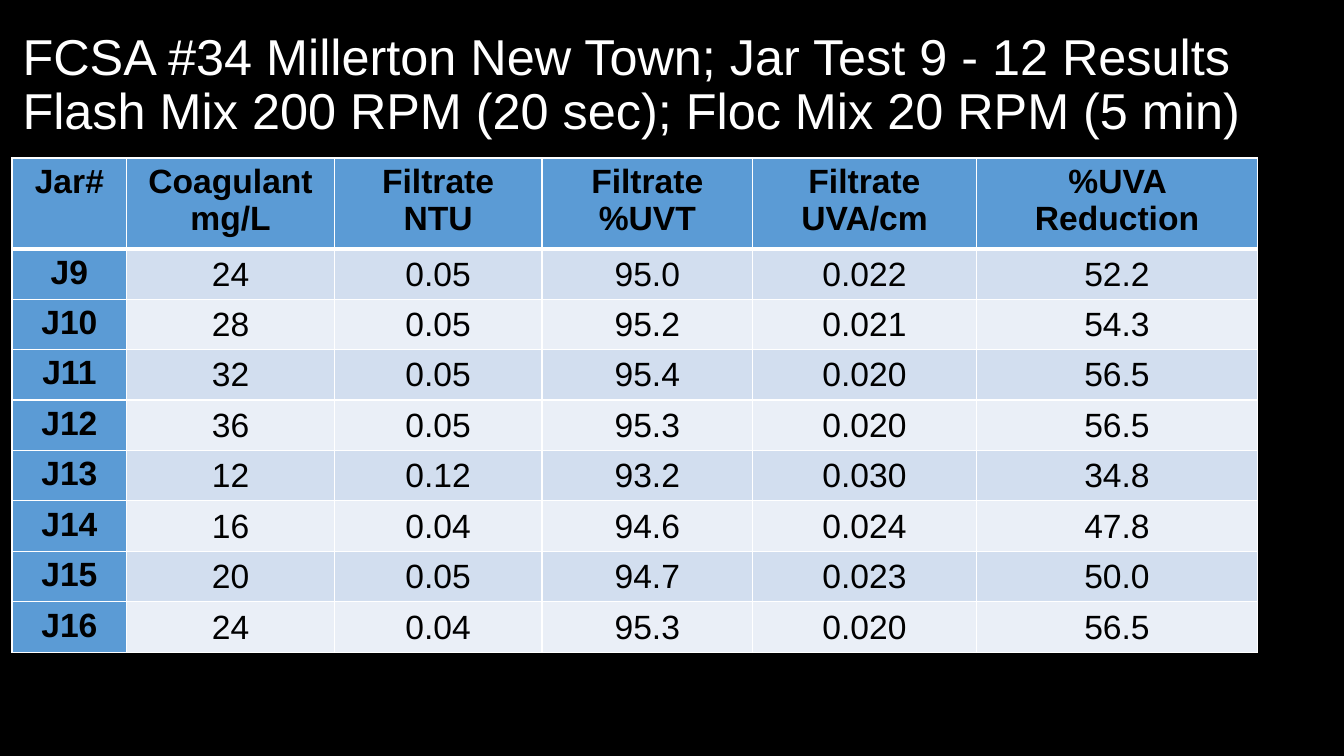
from lxml import etree
from pptx import Presentation
from pptx.dml.color import RGBColor
from pptx.enum.text import MSO_ANCHOR, PP_ALIGN
from pptx.oxml.ns import qn
from pptx.util import Pt

MIDDLE, TOP = MSO_ANCHOR.MIDDLE, MSO_ANCHOR.TOP
CENTER, LEFT = PP_ALIGN.CENTER, PP_ALIGN.LEFT

COLORS = {
    "background": "000000",
    "title": "FFFFFF",
    "text": "000000",
    "border": "FFFFFF",
    "heading": "5B9BD5",
    "odd_row": "D2DEEF",
    "even_row": "EAEFF7",
}

TITLE = (
    "FCSA #34 Millerton New Town; Jar Test 9 - 12 Results\v"
    "Flash Mix 200 RPM (20 sec); Floc Mix 20 RPM (5 min)"
)
HEADINGS = ["Jar#", "Coagulant\nmg/L", "Filtrate\nNTU", "Filtrate\n%UVT",
            "Filtrate\nUVA/cm", "%UVA Reduction"]
JAR_RESULTS = [
    ["J9", "24", "0.05", "95.0", "0.022", "52.2"],
    ["J10", "28", "0.05", "95.2", "0.021", "54.3"],
    ["J11", "32", "0.05", "95.4", "0.020", "56.5"],
    ["J12", "36", "0.05", "95.3", "0.020", "56.5"],
    ["J13", "12", "0.12", "93.2", "0.030", "34.8"],
    ["J14", "16", "0.04", "94.6", "0.024", "47.8"],
    ["J15", "20", "0.05", "94.7", "0.023", "50.0"],
    ["J16", "24", "0.04", "95.3", "0.020", "56.5"],
]
COLUMN_WIDTHS = [82, 148.3, 148.3, 150.5, 159.8, 200.9]
ROW_HEIGHT = 29.5

HEADING_CELL = {"vertical_anchor": TOP}
RESULT_CELL = {"vertical_anchor": MIDDLE, "margin_left": Pt(0.72),
               "margin_right": Pt(0.72), "margin_top": Pt(0.72),
               "margin_bottom": Pt(0)}


def apply_format(target, formats):
    """Set every attribute in formats on the target."""
    for attribute, value in formats.items():
        setattr(target, attribute, value)


def format_text(frame, paragraph_format, font_format, color):
    """Give all text in a frame one paragraph style and one font style."""
    for paragraph in frame.paragraphs:
        apply_format(paragraph, paragraph_format)
        for run in paragraph.runs:
            apply_format(run.font, {"name": "Arial", **font_format})
            run.font.color.rgb = RGBColor.from_string(COLORS[color])


def draw_borders(cell, widths):
    """Draw the cell's borders from a dict of side tags and widths."""
    properties = cell._tc.get_or_add_tcPr()
    for position, (side, width) in enumerate(widths.items()):
        border = etree.Element(qn(f"a:{side}"), w=str(Pt(width)))
        fill = etree.SubElement(border, qn("a:solidFill"))
        etree.SubElement(fill, qn("a:srgbClr"), val=COLORS["border"])
        properties.insert(position, border)


def add_title(slide, left, top, width, height):
    """Place the two-line title in the given box."""
    title = slide.shapes.add_textbox(Pt(left), Pt(top), Pt(width), Pt(height))
    frame = title.text_frame
    apply_format(frame, {"word_wrap": True, "vertical_anchor": MIDDLE})
    frame.text = TITLE
    format_text(frame, {"alignment": LEFT, "line_spacing": 0.9},
                {"size": Pt(36)}, "title")


def add_results_table(slide, left, top):
    """Place the table of jar test results with its corner at left, top."""
    rows = [HEADINGS, *JAR_RESULTS]
    results = slide.shapes.add_table(
        len(rows), len(HEADINGS), Pt(left), Pt(top),
        Pt(sum(COLUMN_WIDTHS)), Pt(ROW_HEIGHT * len(rows))).table
    apply_format(results, {"first_col": True})
    for column, width in zip(results.columns, COLUMN_WIDTHS):
        column.width = Pt(width)
    for row_index, values in enumerate(rows):
        band = "odd_row" if row_index % 2 else "even_row"
        for column_index, value in enumerate(values):
            cell = results.cell(row_index, column_index)
            is_heading = row_index == 0 or column_index == 0
            cell.text = value
            apply_format(cell, HEADING_CELL if is_heading else RESULT_CELL)
            format_text(cell.text_frame, {"alignment": CENTER},
                        {"size": Pt(24), "bold": is_heading}, "text")
            cell.fill.solid()
            cell.fill.fore_color.rgb = RGBColor.from_string(
                COLORS["heading" if is_heading else band])
            draw_borders(cell, {"lnL": 1, "lnR": 1,
                                "lnT": 3 if row_index == 1 else 1,
                                "lnB": 3 if row_index == 0 else 1})


def main():
    """Build the jar test slide and save it."""
    deck = Presentation()
    apply_format(deck, {"slide_width": Pt(960), "slide_height": Pt(540)})
    slide = deck.slides.add_slide(deck.slide_layouts[6])
    background = slide.background.fill
    background.solid()
    background.fore_color.rgb = RGBColor.from_string(COLORS["background"])
    add_title(slide, 9, 9.4, 938, 104.4)
    add_results_table(slide, 8.6, 112.8)
    deck.save("out.pptx")


if __name__ == "__main__":
    main()
